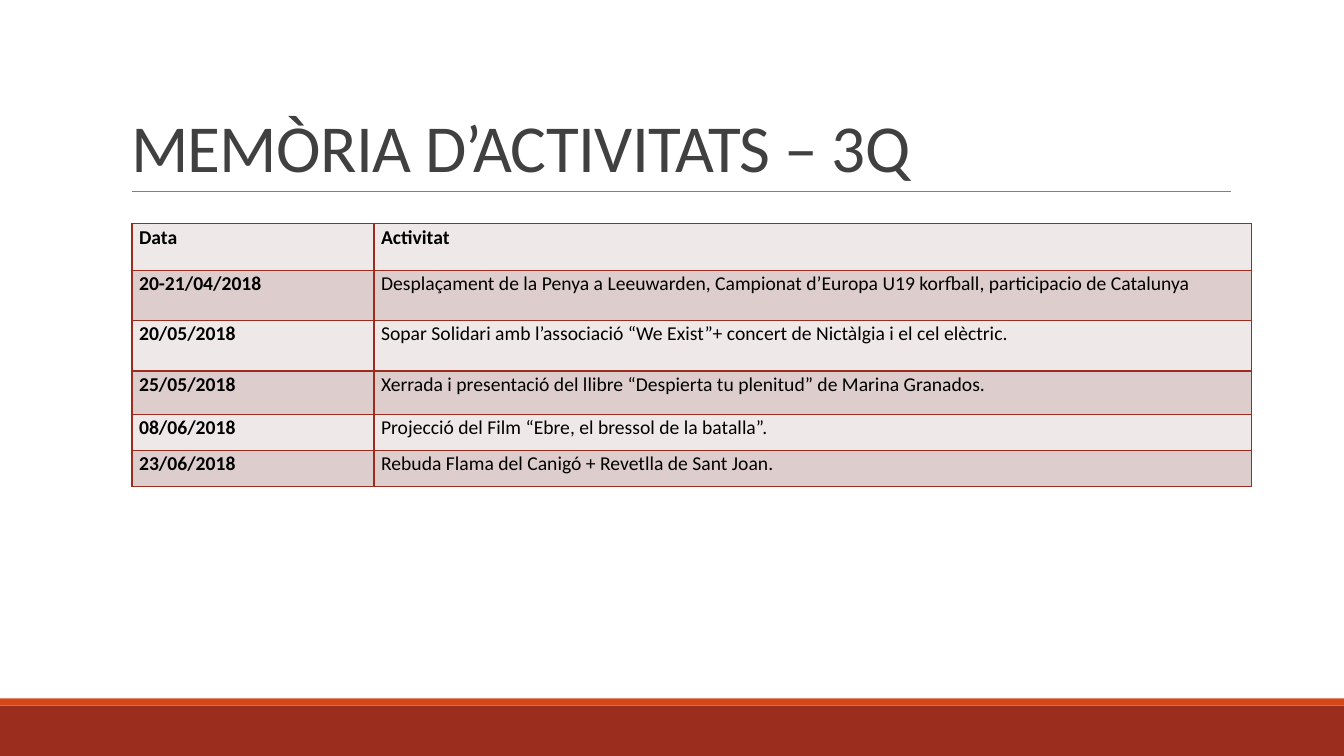
from dataclasses import dataclass

from lxml import etree
from pptx import Presentation
from pptx.dml.color import RGBColor
from pptx.enum.shapes import MSO_CONNECTOR, MSO_SHAPE
from pptx.enum.text import MSO_ANCHOR, MSO_AUTO_SIZE, PP_ALIGN
from pptx.oxml.ns import qn
from pptx.util import Inches, Pt

RECT = MSO_SHAPE.RECTANGLE
STRAIGHT = MSO_CONNECTOR.STRAIGHT
LEFT = PP_ALIGN.LEFT
TOP, BOTTOM = MSO_ANCHOR.TOP, MSO_ANCHOR.BOTTOM
NO_AUTOFIT = MSO_AUTO_SIZE.NONE


@dataclass(frozen=True)
class Theme:
    font: str = "Calibri"
    title_size: int = 48
    table_size: int = 14
    title: str = "404040"
    text: str = "000000"
    dark_red: str = "9B2D1F"
    orange: str = "D34817"
    rule: str = "808080"
    bands: tuple = ("EFE8E8", "DECDCD")


THEME = Theme()

COLUMN_WIDTHS = (2.4, 8.7)
ROW_HEIGHTS = (0.46, 0.5, 0.5, 0.43, 0.36, 0.36)
ACTIVITIES = (
    ("Data", "Activitat"),
    ("20-21/04/2018", "Desplaçament de la Penya a Leeuwarden, Campionat d’Europa U19 korfball, "
                      "participacio de Catalunya"),
    ("20/05/2018", "Sopar Solidari amb l’associació “We Exist”+ concert de Nictàlgia i el cel elèctric."),
    ("25/05/2018", "Xerrada i presentació del llibre “Despierta tu plenitud” de Marina Granados."),
    ("08/06/2018", "Projecció del Film “Ebre, el bressol de la batalla”."),
    ("23/06/2018", "Rebuda Flama del Canigó + Revetlla de Sant Joan."),
)


def rgb(color):
    return RGBColor.from_string(color)


def write_text(tf, text, size, color, bold=False, line_spacing=1.0, character_spacing=None):
    p = tf.paragraphs[0]
    p.alignment = LEFT
    p.line_spacing = line_spacing
    r = p.add_run()
    r.text = text
    r.font.name = THEME.font
    r.font.size = Pt(size)
    r.font.bold = bold
    r.font.color.rgb = rgb(color)
    if character_spacing is not None:
        r.font._element.set("spc", str(round(character_spacing * 100)))


def add_bar(slide, top, height, color):
    sp = slide.shapes.add_shape(RECT, 0, Inches(top), Inches(13.33), Inches(height))
    sp.shadow.inherit = False
    sp.fill.solid()
    sp.fill.fore_color.rgb = rgb(color)
    sp.line.fill.background()


def add_rule(slide, left, right, y):
    line = slide.shapes.add_connector(STRAIGHT, Inches(left), Inches(y), Inches(right), Inches(y))
    line.line.color.rgb = rgb(THEME.rule)
    line.line.width = Pt(0.5)
    etree.SubElement(line._element.spPr, qn("a:effectLst"))


def set_title(slide, text):
    sp = slide.shapes.title
    sp.left, sp.top, sp.width, sp.height = Inches(1.2), Inches(0.31), Inches(11), Inches(1.59)
    tf = sp.text_frame
    tf.word_wrap = True
    tf.auto_size = NO_AUTOFIT
    tf.vertical_anchor = BOTTOM
    write_text(tf, text, THEME.title_size, THEME.title, line_spacing=0.85, character_spacing=-0.5)


def set_borders(cell, color, width):
    tcPr = cell._tc.get_or_add_tcPr()
    for side in ("a:lnL", "a:lnR", "a:lnT", "a:lnB"):
        ln = etree.SubElement(tcPr, qn(side), w=str(Pt(width)))
        fill = etree.SubElement(ln, qn("a:solidFill"))
        etree.SubElement(fill, qn("a:srgbClr"), val=color)


def format_cell(cell, text, fill, bold):
    cell.margin_left = cell.margin_right = Inches(0.07)
    cell.margin_top = cell.margin_bottom = 0
    cell.vertical_anchor = TOP
    set_borders(cell, THEME.dark_red, 1)
    cell.fill.solid()
    cell.fill.fore_color.rgb = rgb(fill)
    write_text(cell.text_frame, text, THEME.table_size, THEME.text, bold=bold, line_spacing=1.07)


def add_activity_table(slide, left, top):
    frame = slide.shapes.add_table(
        len(ACTIVITIES), len(COLUMN_WIDTHS), Inches(left), Inches(top),
        Inches(sum(COLUMN_WIDTHS)), Inches(sum(ROW_HEIGHTS)))
    table = frame.table
    table.first_row = table.horz_banding = False
    for column, width in zip(table.columns, COLUMN_WIDTHS):
        column.width = Inches(width)
    for i, (height, texts) in enumerate(zip(ROW_HEIGHTS, ACTIVITIES)):
        table.rows[i].height = Inches(height)
        for j, text in enumerate(texts):
            format_cell(table.cell(i, j), text, THEME.bands[i % 2], bold=i == 0 or j == 0)


def main():
    prs = Presentation()
    prs.slide_width, prs.slide_height = Inches(13.33), Inches(7.5)
    slide = prs.slides.add_slide(prs.slide_layouts[5])
    add_bar(slide, 7, 0.5, THEME.dark_red)
    add_bar(slide, 6.93, 0.07, THEME.orange)
    add_rule(slide, 1.31, 12.21, 1.9)
    set_title(slide, "MEMÒRIA D’ACTIVITATS – 3Q")
    add_activity_table(slide, 1.31, 2.22)
    prs.save("out.pptx")


if __name__ == "__main__":
    main()
